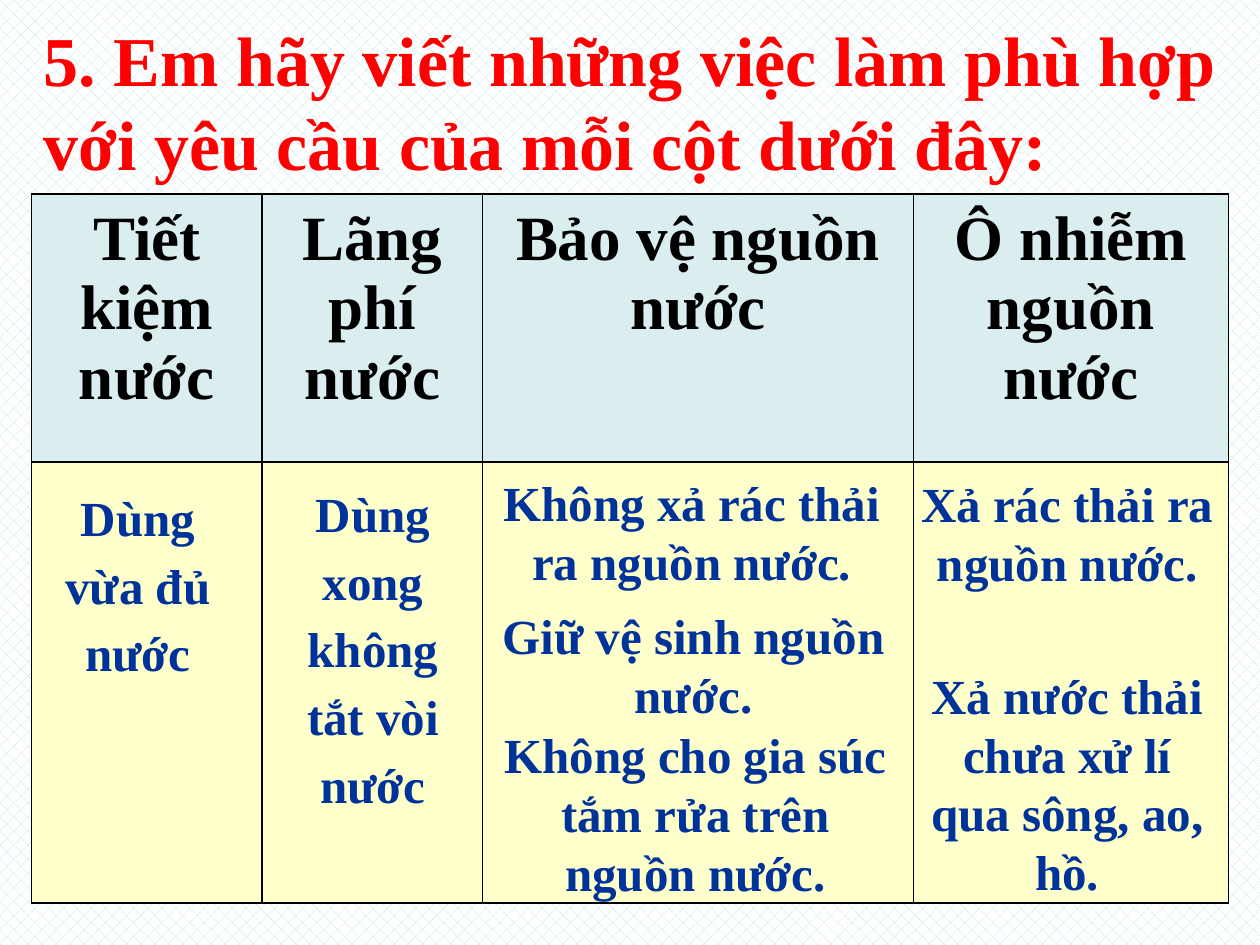
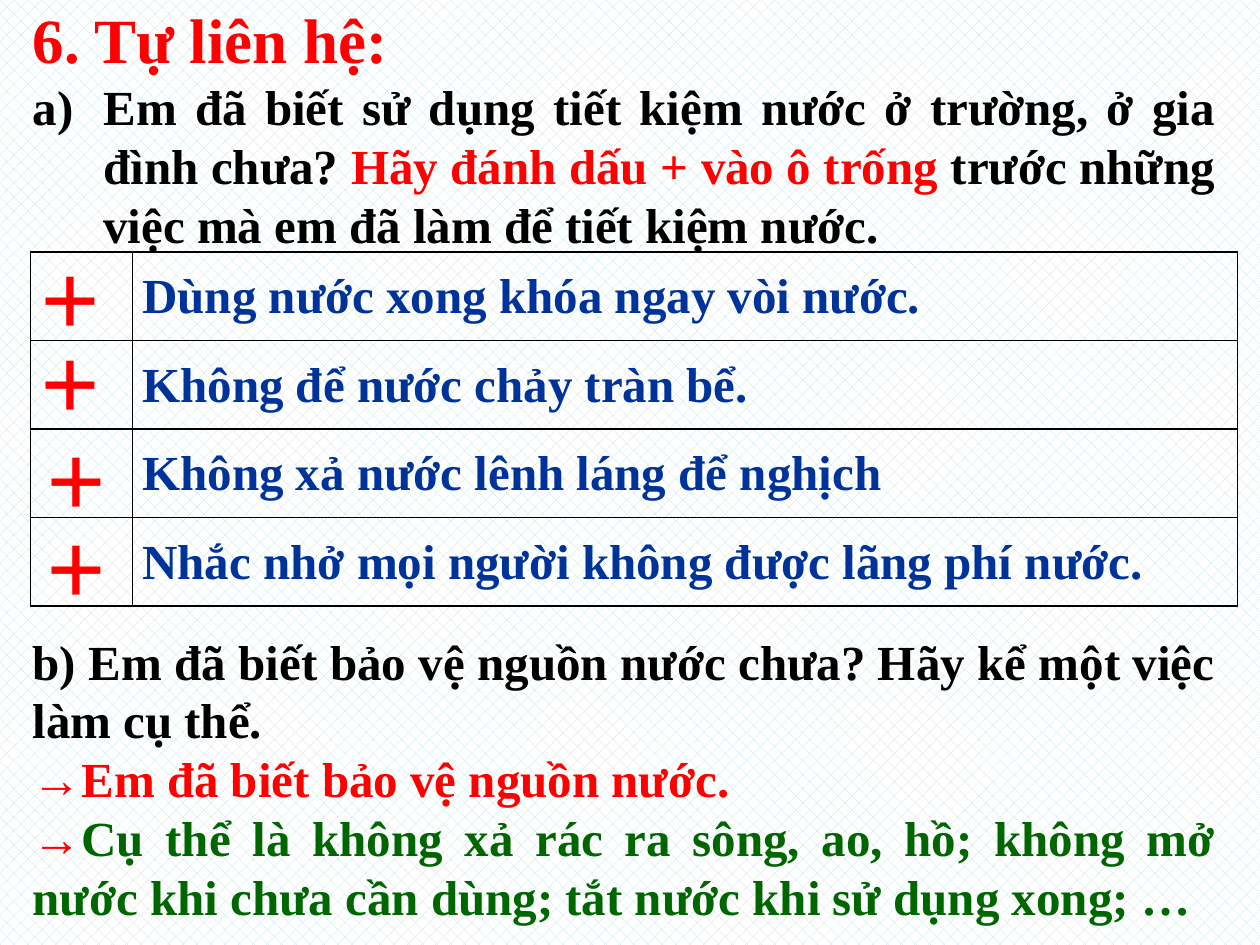
from lxml import etree
from pptx import Presentation
from pptx import util as u
from pptx.dml import color as dml
from pptx.enum import dml as fills, shapes, text
from pptx.oxml import ns

COLORS = {"red": "FF0000", "black": "000000", "blue": "003399", "green": "006600",
          "header": "DAEDEF", "answer": "FFFFCC", "pattern": "BBE0E3", "white": "FFFFFF"}
FONT = "Times New Roman"
CENTER, JUSTIFY = text.PP_ALIGN.CENTER, text.PP_ALIGN.JUSTIFY
CELL_MARGIN = 5.76

HEADING = "5. Em hãy viết những việc làm phù hợp với yêu cầu của mỗi cột dưới đây:"
COLUMNS = [("Tiết kiệm nước", 131.8), ("Lãng phí nước", 126),
           ("Bảo vệ nguồn nước", 246.2), ("Ô nhiễm nguồn nước", 180)]
LOOSE = {"alignment": CENTER, "line_spacing": 1.15, "space_after": u.Pt(15)}
TIGHT = {"alignment": CENTER, "space_after": u.Pt(12)}
ANSWERS = [
    ("Dùng vừa đủ nước", (19.4, 270, 118.8, 124.6), LOOSE),
    ("Dùng xong không tắt vòi nước", (156.2, 267.8, 113.8, 202.3), LOOSE),
    ("Không xả rác thải ra nguồn nước.", (275, 266.4, 240.5, 74.9), TIGHT),
    ("Giữ vệ sinh nguồn nước.", (275, 342.7, 242.6, 74.9), TIGHT),
    ("Không cho gia súc tắm rửa trên nguồn nước.", (277.2, 410.4, 240.5, 108.7), TIGHT),
    ("Xả rác thải ra nguồn nước.", (517.7, 267.1, 184.3, 108.7), TIGHT),
    ("Xả nước thải chưa xử lí qua sông, ao, hồ.", (517.7, 376.6, 184.3, 143.3), TIGHT),
]

QUESTIONS = [
    ([("6. Tự liên hệ:", 36, "red")], {}),
    ([("Em đã biết sử dụng tiết kiệm nước ở trường, ở gia đình chưa? ", 28, "black"),
      ("Hãy đánh dấu + vào ô trống ", 28, "red"),
      ("trước những việc mà em đã làm để tiết kiệm nước.", 28, "black")], {}),
    ([("b) Em đã biết bảo vệ nguồn nước chưa? Hãy kể một việc làm cụ thể.", 28, "black")],
     {"space_before": u.Pt(216)}),
    ([("→Em đã biết bảo vệ nguồn nước.", 28, "red")], {}),
    ([("→", 28, "red"),
      ("Cụ thể là không xả rác ra sông, ao, hồ; không mở nước khi chưa cần dùng; "
       "tắt nước khi sử dụng xong; …", 28, "green")], {}),
]
LETTERED = 1
HABITS = ["Dùng nước xong khóa ngay vòi nước.", "Không để nước chảy tràn bể.",
          "Không xả nước lênh láng để nghịch", "Nhắc nhở mọi người không được lãng phí nước."]
HABIT_FORMAT = {"line_spacing": 1.15, "space_after": u.Pt(15)}
MARKS = [(13.7, 144), (13.7, 192.2), (17.3, 247.7), (17.3, 298.1)]


def points(values):
    return [u.Pt(value) for value in values]


def rgb(name):
    return dml.RGBColor.from_string(COLORS[name])


def assign(target, values):
    for name, value in values.items():
        setattr(target, name, value)


def write(para, spans, formats):
    assign(para, formats)
    for words, size, color in spans:
        span = para.add_run()
        span.text = words
        assign(span.font, {"name": FONT, "size": u.Pt(size), "bold": True})
        span.font.color.rgb = rgb(color)


def add_page(deck):
    page = deck.slides.add_slide(deck.slide_layouts[6])
    fill = page.background.fill
    fill.patterned()
    fill.pattern = fills.MSO_PATTERN.PERCENT_25
    fill.fore_color.rgb, fill.back_color.rgb = rgb("pattern"), rgb("white")
    return page


def add_text(page, place, paragraphs, anchor=text.MSO_ANCHOR.TOP):
    box = page.shapes.add_textbox(*points(place))
    frame = box.text_frame
    assign(frame, {"word_wrap": True, "vertical_anchor": anchor})
    for index, (spans, formats) in enumerate(paragraphs):
        write(frame.add_paragraph() if index else frame.paragraphs[0], spans, formats)
    return frame


def border_cell(cell):
    properties = cell._tc.get_or_add_tcPr()
    for side in ("a:lnL", "a:lnR", "a:lnT", "a:lnB"):
        line = etree.SubElement(properties, ns.qn(side), w=str(u.Pt(1)))
        solid = etree.SubElement(line, ns.qn("a:solidFill"))
        etree.SubElement(solid, ns.qn("a:srgbClr"), val=COLORS["black"])


def add_grid(page, corner, widths, heights, row_fills):
    place = points((*corner, sum(widths), sum(heights)))
    table = page.shapes.add_table(len(heights), len(widths), *place).table
    assign(table, {"first_row": False, "horz_banding": False})
    for column, width in zip(table.columns, widths):
        column.width = u.Pt(width)
    for row, height, fill in zip(table.rows, heights, row_fills):
        row.height = u.Pt(height)
        for cell in row.cells:
            border_cell(cell)
            assign(cell, {f"margin_{side}": u.Pt(CELL_MARGIN)
                          for side in ("left", "right", "top", "bottom")})
            if fill:
                cell.fill.solid()
                cell.fill.fore_color.rgb = rgb(fill)
            else:
                cell.fill.background()
    return table


def add_mark(page, corner):
    mark = page.shapes.add_shape(shapes.MSO_SHAPE.OVAL, *points((*corner, 53.3, 48.2)))
    mark.shadow.inherit = False
    mark.fill.background()
    mark.line.fill.background()
    assign(mark.text_frame, {"word_wrap": False, "vertical_anchor": text.MSO_ANCHOR.MIDDLE})
    write(mark.text_frame.paragraphs[0], [("+", 60, "red")], {"alignment": CENTER})


def build_columns(deck):
    page = add_page(deck)
    table = add_grid(page, (18, 110.9), [width for _, width in COLUMNS],
                     [153.2, 252], ["header", "answer"])
    for cell, (label, _) in zip(table.rows[0].cells, COLUMNS):
        write(cell.text_frame.paragraphs[0], [(label, 36, "black")],
              {"alignment": CENTER, "space_after": u.Pt(15)})
    add_text(page, (18, 5, 684, 104.4), [([(HEADING, 40, "red")], {"alignment": JUSTIFY})],
             text.MSO_ANCHOR.MIDDLE)
    for words, place, formats in ANSWERS:
        add_text(page, place, [([(words, 28, "blue")], formats)])


def build_habits(deck):
    page = add_page(deck)
    frame = add_text(page, (11.5, -3, 689.8, 540),
                     [(spans, {"alignment": JUSTIFY, **formats}) for spans, formats in QUESTIONS])
    properties = frame.paragraphs[LETTERED]._p.get_or_add_pPr()
    properties.set("marL", str(u.Pt(40.5)))
    properties.set("indent", str(-u.Pt(40.5)))
    etree.SubElement(properties, ns.qn("a:buFont"), typeface=FONT)
    etree.SubElement(properties, ns.qn("a:buAutoNum"), type="alphaLcParenR")
    table = add_grid(page, (17.3, 144), [58.3, 631.5], [50.6] * len(HABITS), [None] * len(HABITS))
    for row, habit in zip(table.rows, HABITS):
        write(row.cells[1].text_frame.paragraphs[0], [(habit, 28, "blue")], HABIT_FORMAT)
    for corner in MARKS:
        add_mark(page, corner)


def main():
    deck = Presentation()
    assign(deck, {"slide_width": u.Pt(720), "slide_height": u.Pt(540)})
    build_columns(deck)
    build_habits(deck)
    deck.save("out.pptx")


if __name__ == "__main__":
    main()
